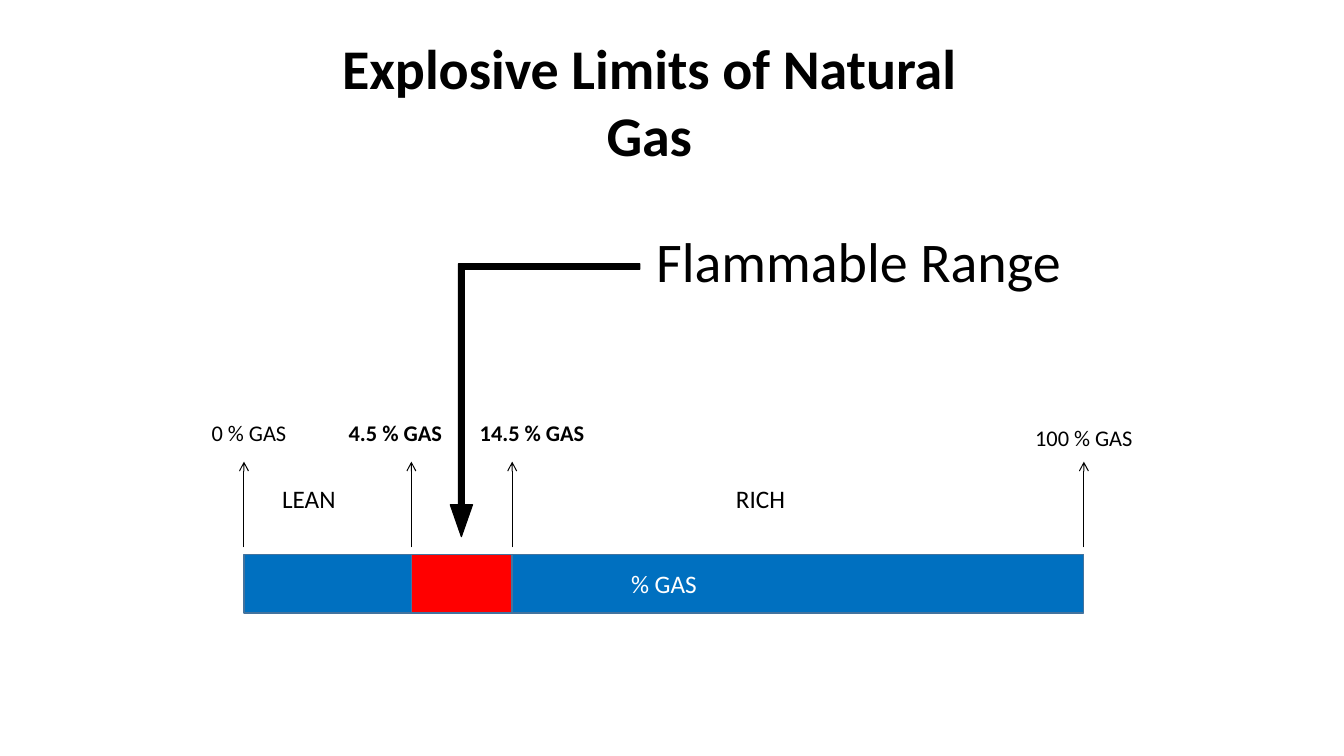
from dataclasses import dataclass

from lxml.etree import SubElement
from pptx import Presentation
from pptx.dml.color import RGBColor
from pptx.enum.shapes import MSO_CONNECTOR, MSO_SHAPE
from pptx.enum.text import MSO_ANCHOR, MSO_AUTO_SIZE, PP_ALIGN
from pptx.oxml.ns import qn
from pptx.util import Inches, Pt


@dataclass(frozen=True)
class Theme:
    font: str = "Calibri"
    ink: RGBColor = RGBColor(0, 0, 0)
    paper: RGBColor = RGBColor(255, 255, 255)
    gas: RGBColor = RGBColor(0x00, 0x70, 0xC0)
    flammable: RGBColor = RGBColor(0xFF, 0x00, 0x00)
    edge: RGBColor = RGBColor(0x43, 0x73, 0x9E)
    heading_size: int = 40
    zone_size: int = 18
    limit_size: int = 16
    hairline: float = 0.75
    edge_width: float = 1


class SlideBuilder:
    def __init__(self, slide, theme):
        self.slide = slide
        self.theme = theme

    def add_text(self, shape, text, size, color, bold=False,
                 align=PP_ALIGN.LEFT, anchor=MSO_ANCHOR.TOP, wrap=True):
        frame = shape.text_frame
        frame.auto_size = MSO_AUTO_SIZE.NONE
        frame.word_wrap = wrap
        frame.vertical_anchor = anchor
        paragraph = frame.paragraphs[0]
        paragraph.alignment = align
        run = paragraph.add_run()
        run.text = text
        run.font.name = self.theme.font
        run.font.size = Pt(size)
        run.font.bold = bold
        run.font.color.rgb = color

    def title(self, text, left, top, width, height):
        heading = self.slide.shapes.title
        heading.left, heading.top = Inches(left), Inches(top)
        heading.width, heading.height = Inches(width), Inches(height)
        self.add_text(heading, text, self.theme.heading_size, self.theme.ink,
                      bold=True, align=PP_ALIGN.CENTER)

    def label(self, text, left, top, width, height, size, **style):
        box = self.slide.shapes.add_textbox(
            Inches(left), Inches(top), Inches(width), Inches(height))
        self.add_text(box, text, size, self.theme.ink, **style)

    def block(self, kind, left, top, width, height, fill, edge, edge_width):
        shape = self.slide.shapes.add_shape(
            kind, Inches(left), Inches(top), Inches(width), Inches(height))
        shape.shadow.inherit = False
        shape.fill.solid()
        shape.fill.fore_color.rgb = fill
        shape.line.color.rgb = edge
        shape.line.width = Pt(edge_width)
        return shape

    def bar(self, left, top, width, height, fill):
        return self.block(MSO_SHAPE.RECTANGLE, left, top, width, height,
                          fill, self.theme.edge, self.theme.edge_width)

    def bent_arrow(self, left, top, width, height, proportions):
        arrow = self.block(MSO_SHAPE.BENT_ARROW, left, top, width, height,
                           self.theme.ink, self.theme.ink, self.theme.hairline)
        for index, proportion in enumerate(proportions):
            arrow.adjustments[index] = proportion
        arrow.rotation = 270
        arrow._element.spPr.find(qn("a:xfrm")).set("flipH", "1")

    def up_arrow(self, x, bottom, top):
        arrow = self.slide.shapes.add_connector(
            MSO_CONNECTOR.STRAIGHT,
            Inches(x), Inches(bottom), Inches(x), Inches(top))
        arrow.line.color.rgb = self.theme.ink
        arrow.line.width = Pt(self.theme.hairline)
        outline = arrow._element.spPr.find(qn("a:ln"))
        SubElement(outline, qn("a:tailEnd"), type="arrow")
        SubElement(arrow._element.spPr, qn("a:effectLst"))


def main():
    deck = Presentation()
    deck.slide_width, deck.slide_height = Inches(13.33), Inches(7.5)
    theme = Theme()
    page = SlideBuilder(deck.slides.add_slide(deck.slide_layouts[5]), theme)

    zero, lower_limit, upper_limit, full = 2.42, 4.08, 5.08, 10.75
    bar_top, bar_height = 5.5, 0.58

    page.title("Explosive Limits of Natural Gas", 2.97, 0.28, 6.94, 1.45)

    gas_bar = page.bar(zero, bar_top, full - zero, bar_height, theme.gas)
    page.add_text(gas_bar, "% GAS", theme.zone_size, theme.paper,
                  align=PP_ALIGN.CENTER, anchor=MSO_ANCHOR.MIDDLE)
    page.bar(lower_limit, bar_top, upper_limit - lower_limit, bar_height,
             theme.flammable)

    for limit in (zero, lower_limit, upper_limit, full):
        page.up_arrow(limit, 5.43, 4.58)

    for text, left, width, bold in (
        ("0 % GAS", 2, 0.95, False),
        ("4.5 % GAS", 3.36, 1.14, True),
        ("14.5 % GAS", 4.66, 1.26, True),
    ):
        page.label(text, left, 4.11, width, 0.37, theme.limit_size,
                   bold=bold, wrap=False)
    page.label("100 % GAS", 10.05, 4.16, 1.4, 0.37, theme.limit_size,
               align=PP_ALIGN.CENTER)

    for text, left, width in (("LEAN", 2.7, 0.74), ("RICH", 7.2, 0.69)):
        page.label(text, left, 4.75, width, 0.4, theme.zone_size, wrap=False)

    page.label("Flammable Range", 6.41, 2.2, 4.33, 0.77, theme.heading_size)
    page.bent_arrow(4.05, 3.03, 2.71, 1.88, (0.031, 0.059, 0.169, 0))

    deck.save("out.pptx")


if __name__ == "__main__":
    main()
